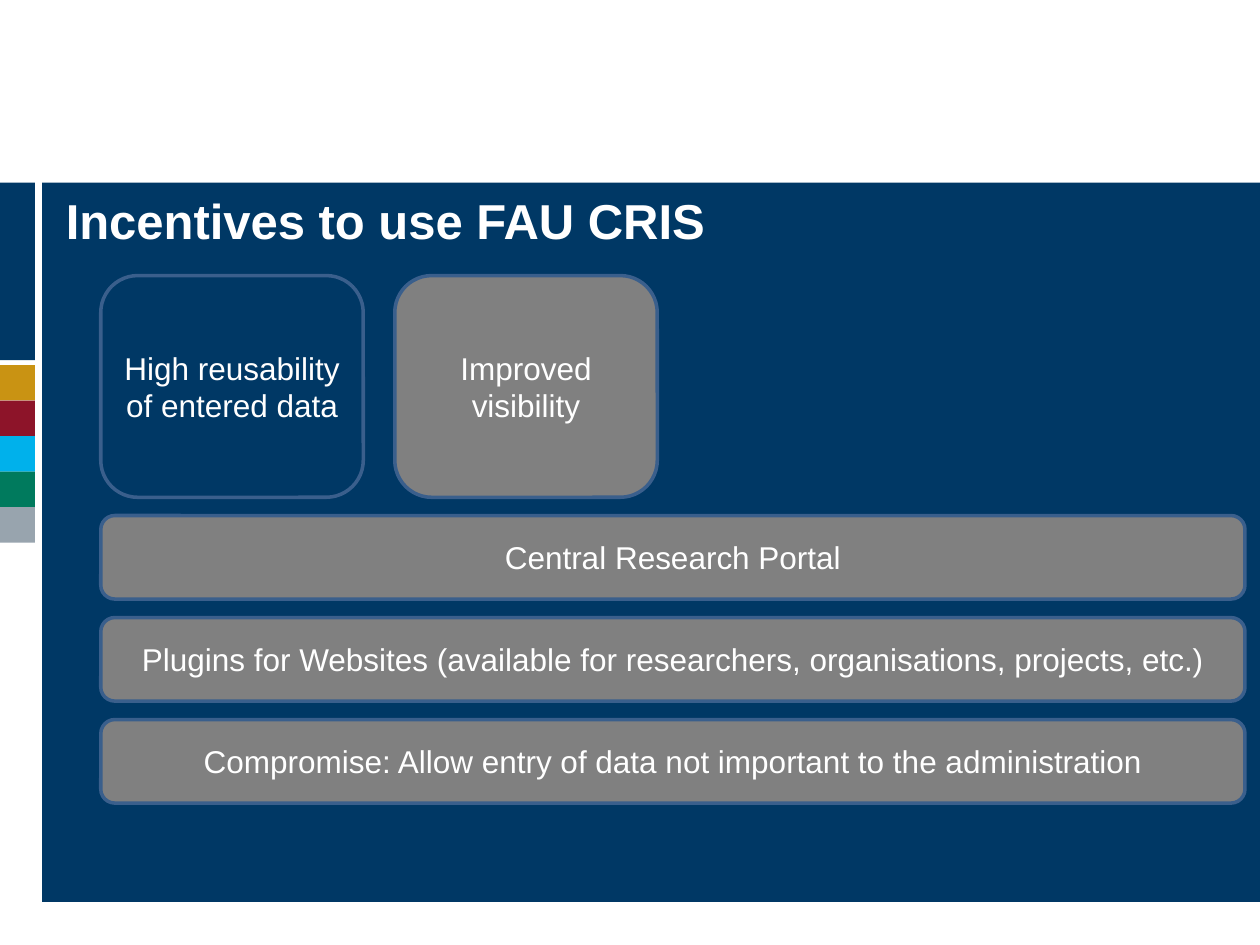
from pptx import Presentation
from pptx.dml.color import RGBColor as RGB
from pptx.enum.shapes import MSO_SHAPE as Shape
from pptx.enum.text import MSO_ANCHOR as Anchor, PP_ALIGN as Align
from pptx.util import Pt

TITLE = "Incentives to use FAU CRIS"
TILES = [("High reusability of entered data", "navy"),
         ("Improved visibility", "gray")]
BARS = ["Central Research Portal",
        "Plugins for Websites (available for researchers, organisations, projects, etc.)",
        "Compromise: Allow entry of data not important to the administration"]
STRIPES = ["gold", "red", "cyan", "green", "silver"]
COLORS = {"navy": "003865", "gray": "808080", "edge": "3A5F8C", "white": "FFFFFF",
          "gold": "C99313", "red": "8D1429", "cyan": "00B1EB",
          "green": "007A5D", "silver": "98A4AE"}

WIDE, HIGH = 720, 540
TOP = 104.4                     # upper edge of the blue areas
SIDE_W = 20                     # width of the side strip
STRIPE_Y, STRIPE_H = 208.6, 20.3
LEFT = 57.6                     # left edge of tiles and bars
TILE_Y, TILE_W, TILE_H, TILE_STEP = 157.5, 150, 126.7, 168
BAR_Y, BAR_W, BAR_H, BAR_STEP = 294.6, 653.8, 47.7, 58.3


def color(name):
    return RGB.from_string(COLORS[name])


def add_box(kind, x, y, w, h, fill):
    box = slide.shapes.add_shape(kind, Pt(x), Pt(y), Pt(w), Pt(h))
    box.shadow.inherit = False
    box.fill.solid()
    box.fill.fore_color.rgb = color(fill)
    box.line.fill.background()
    return box


def add_run(para, text, size, bold=False):
    run = para.add_run()
    run.text = text
    font = run.font
    font.name, font.size, font.bold = "Arial", Pt(size), bold
    font.color.rgb = color("white")


def add_card(x, y, w, h, text, fill):
    """Add a rounded, outlined box with centred text."""
    card = add_box(Shape.ROUNDED_RECTANGLE, x, y, w, h, fill)
    card.line.color.rgb = color("edge")
    card.line.width = Pt(2)
    frame = card.text_frame
    frame.word_wrap = True
    frame.vertical_anchor = Anchor.MIDDLE
    para = frame.paragraphs[0]
    para.alignment = Align.CENTER
    add_run(para, text, 18)


def place_title():
    title = slide.shapes.title
    title.left, title.top, title.width, title.height = Pt(37.6), Pt(110.2), Pt(674.6), Pt(37.4)
    frame = title.text_frame
    frame.margin_left = frame.margin_top = frame.margin_right = frame.margin_bottom = 0
    frame.word_wrap = True
    frame.vertical_anchor = Anchor.TOP
    para = frame.paragraphs[0]
    para.alignment = Align.LEFT
    para.line_spacing = Pt(32)
    add_run(para, TITLE, 28, bold=True)
    # Bring the title in front of the blue panel
    slide.shapes._spTree.append(title._element)


deck = Presentation()
deck.slide_width, deck.slide_height = Pt(WIDE), Pt(HIGH)
slide = deck.slides.add_slide(deck.slide_layouts[5])

for i, name in enumerate(STRIPES):
    add_box(Shape.RECTANGLE, 0, STRIPE_Y + i * STRIPE_H, SIDE_W, STRIPE_H, name)
add_box(Shape.RECTANGLE, 0, TOP, SIDE_W, 101.4, "navy")
add_box(Shape.RECTANGLE, 24, TOP, WIDE - 24, 411, "navy")
place_title()

for i, (text, fill) in enumerate(TILES):
    add_card(LEFT + i * TILE_STEP, TILE_Y, TILE_W, TILE_H, text, fill)
for i, text in enumerate(BARS):
    add_card(LEFT, BAR_Y + i * BAR_STEP, BAR_W, BAR_H, text, "gray")

deck.save("out.pptx")
